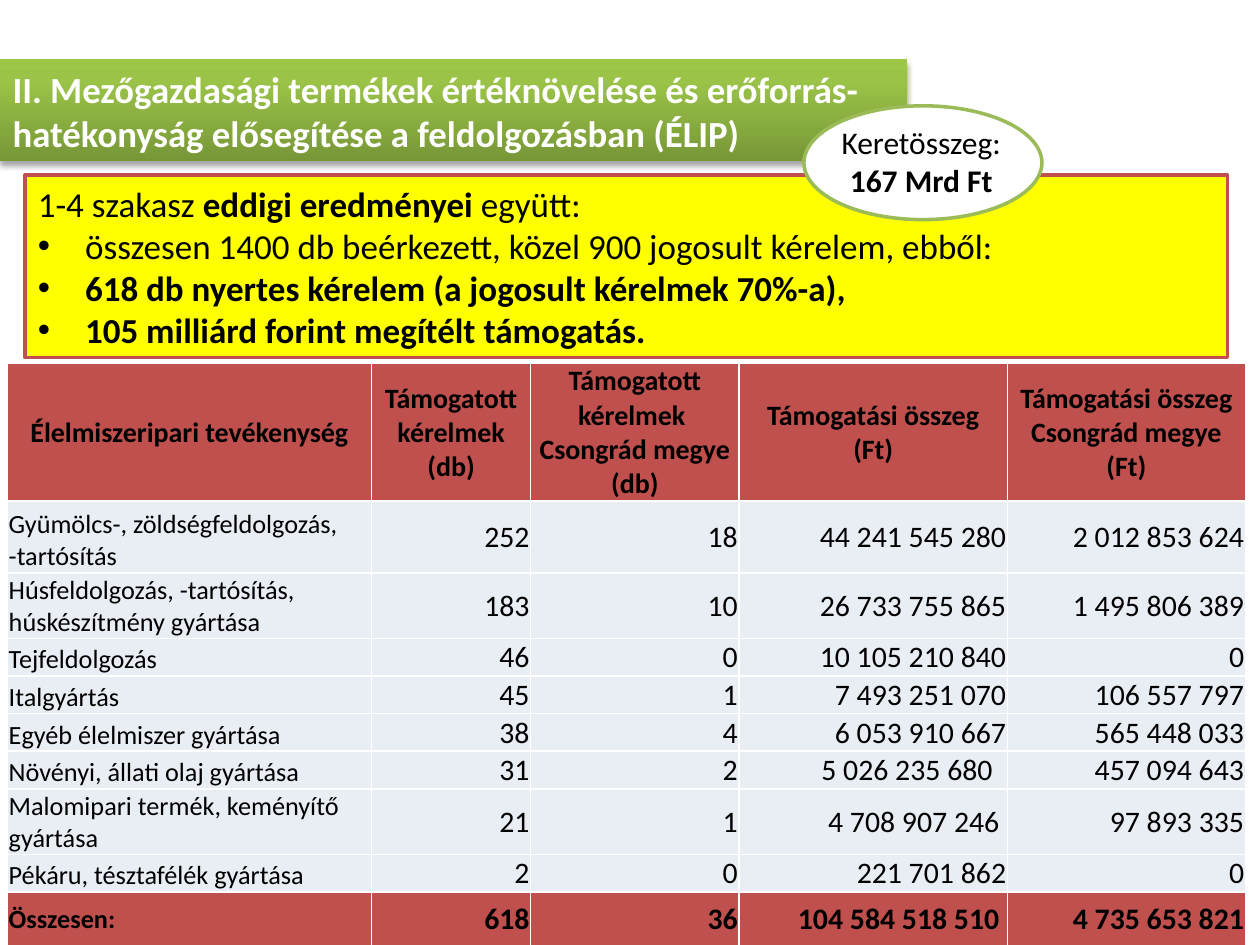
from pptx import Presentation
from pptx.dml.color import RGBColor
from pptx.enum.shapes import MSO_SHAPE
from pptx.enum.text import MSO_ANCHOR, MSO_AUTO_SIZE, PP_ALIGN
from pptx.oxml import parse_xml
from pptx.oxml.ns import nsdecls
from pptx.util import Pt

COLORS = {
    "text": "000000", "white": "FFFFFF", "yellow": "FFFF00", "red": "C0504D",
    "row": "E9EDF4", "green": "9BBB59", "dark_green": "779737",
    "mid_green": "9BC348", "light_green": "9DC746",
}
FONT = "Calibri"
HEADERS = [
    "Élelmiszeripari tevékenység",
    "Támogatott kérelmek (db)",
    "Támogatott kérelmek \nCsongrád megye\n(db)",
    "Támogatási összeg\n(Ft)",
    "Támogatási összeg\nCsongrád megye\n(Ft)",
]
ACTIVITIES = [
    ["Gyümölcs-, zöldségfeldolgozás,\n-tartósítás", "252", "18", "44 241 545 280", "2 012 853 624"],
    ["Húsfeldolgozás, -tartósítás, húskészítmény gyártása", "183", "10", "26 733 755 865", "1 495 806 389"],
    ["Tejfeldolgozás", "46", "0", "10 105 210 840", "0"],
    ["Italgyártás", "45", "1", "7 493 251 070", "106 557 797"],
    ["Egyéb élelmiszer gyártása", "38", "4", "6 053 910 667", "565 448 033"],
    ["Növényi, állati olaj gyártása", "31", "2", "5 026 235 680  ", "457 094 643"],
    ["Malomipari termék, keményítő gyártása", "21", "1", "4 708 907 246 ", "97 893 335"],
    ["Pékáru, tésztafélék gyártása", "2", "0", "221 701 862", "0"],
]
TOTALS = ["Összesen:", "618", "36", "104 584 518 510 ", "4 735 653 821"]
COLUMN_WIDTHS = [208, 91, 119, 153.4, 136]
ROW_HEIGHTS = [72, 41, 27.4, 16, 16, 16, 16, 27.4, 16, 31]


def rgb(name):
    """Return the named palette colour."""
    return RGBColor.from_string(COLORS[name])


def place(shape, box):
    """Move and size a shape to a box given in points."""
    shape.left, shape.top, shape.width, shape.height = map(Pt, box)


def style(span, size, bold=False, color="text"):
    """Format one run."""
    span.font.name = FONT
    span.font.size = Pt(size)
    span.font.bold = bold
    span.font.color.rgb = rgb(color)


def paint(shape, fill, line):
    """Give a shape a plain fill and a two-point outline."""
    shape.fill.solid()
    shape.fill.fore_color.rgb = rgb(fill)
    shape.line.color.rgb = rgb(line)
    shape.line.width = Pt(2)


def add_title(page, box):
    """Fill the title placeholder as a green gradient banner with a shadow."""
    title = page.shapes.title
    place(title, box)
    stops = "".join(
        f'<a:gs pos="{position * 1000}"><a:srgbClr val="{COLORS[name]}"/></a:gs>'
        for position, name in [(0, "dark_green"), (80, "mid_green"), (100, "light_green")]
    )
    properties = title.element.spPr
    properties.append(parse_xml(
        f'<a:prstGeom {nsdecls("a")} prst="rect"><a:avLst/></a:prstGeom>'))
    properties.append(parse_xml(
        f'<a:gradFill {nsdecls("a")} rotWithShape="1"><a:gsLst>{stops}</a:gsLst>'
        '<a:lin ang="16200000" scaled="0"/></a:gradFill>'))
    properties.append(parse_xml(
        f'<a:effectLst {nsdecls("a")}><a:outerShdw blurRad="{Pt(3.1)}" dist="{Pt(1.8)}" '
        f'dir="5400000" rotWithShape="0"><a:srgbClr val="{COLORS["text"]}">'
        '<a:alpha val="35000"/></a:srgbClr></a:outerShdw></a:effectLst>'))
    frame = title.text_frame
    frame.text = ("II. Mezőgazdasági termékek értéknövelése és "
                  "erőforrás-hatékonyság elősegítése a feldolgozásban (ÉLIP)")
    frame.auto_size = MSO_AUTO_SIZE.NONE
    frame.vertical_anchor = MSO_ANCHOR.MIDDLE
    para = frame.paragraphs[0]
    para.alignment = PP_ALIGN.LEFT
    style(para.runs[0], 21, True, "white")


def add_results(page, box):
    """Fill the body placeholder with the results so far."""
    body = page.placeholders[1]
    place(body, box)
    paint(body, "yellow", "red")
    lines = [
        [("1-4 szakasz ", False), ("eddigi eredményei ", True), ("együtt:", False)],
        [("összesen 1400 db beérkezett, közel 900 jogosult kérelem, ebből:", False)],
        [("618 db nyertes kérelem (a jogosult kérelmek 70%-a),", True)],
        [("105 milliárd forint megítélt támogatás.", True)],
    ]
    frame = body.text_frame
    frame.auto_size = MSO_AUTO_SIZE.NONE
    frame.vertical_anchor = MSO_ANCHOR.MIDDLE
    for index, spans in enumerate(lines):
        para = frame.add_paragraph() if index else frame.paragraphs[0]
        para.space_before = Pt(0)
        indent = Pt(27) if index else 0
        bullet = '<a:buChar {} char="•"/>' if index else '<a:buNone {}/>'
        properties = para._p.get_or_add_pPr()
        properties.set("marL", str(indent))
        properties.set("indent", str(-indent))
        properties.append(parse_xml(bullet.format(nsdecls("a"))))
        for text, bold in spans:
            span = para.add_run()
            span.text = text
            style(span, 20, bold)


def fill_cell(cell, text, size, bold, fill, alignment, anchor):
    """Write and format one table cell with white borders."""
    cell.text = text
    cell.margin_left = cell.margin_right = cell.margin_top = Pt(0.7)
    cell.margin_bottom = 0
    cell.vertical_anchor = anchor
    cell.fill.solid()
    cell.fill.fore_color.rgb = rgb(fill)
    for para in cell.text_frame.paragraphs:
        para.alignment = alignment
        for span in para.runs:
            style(span, size, bold)
    properties = cell._tc.get_or_add_tcPr()
    for index, side in enumerate(["lnL", "lnR", "lnT", "lnB"]):
        properties.insert(index, parse_xml(
            f'<a:{side} {nsdecls("a")} w="{Pt(1)}"><a:solidFill>'
            f'<a:srgbClr val="{COLORS["white"]}"/></a:solidFill></a:{side}>'))


def add_support_table(page, box):
    """Add the table of support by food industry activity."""
    rows = [HEADERS, *ACTIVITIES, TOTALS]
    table = page.shapes.add_table(len(rows), len(HEADERS), *map(Pt, box)).table
    table.first_row = table.horz_banding = False
    for column, width in zip(table.columns, COLUMN_WIDTHS):
        column.width = Pt(width)
    for row, height in zip(table.rows, ROW_HEIGHTS):
        row.height = Pt(height)
    for row_index, values in enumerate(rows):
        header, total = values is HEADERS, values is TOTALS
        for column_index, text in enumerate(values):
            label = column_index == 0
            size = 16 if header else 15 if label else 17
            alignment = (PP_ALIGN.CENTER if header
                         else PP_ALIGN.LEFT if label else PP_ALIGN.RIGHT)
            anchor = (MSO_ANCHOR.BOTTOM if label and not (header or total)
                      else MSO_ANCHOR.MIDDLE)
            fill_cell(table.cell(row_index, column_index), text, size, header or total,
                      "red" if header or total else "row", alignment, anchor)


def add_budget(page, box):
    """Add the oval with the budget label centred on it."""
    left, top, width, height = box
    oval = page.shapes.add_shape(MSO_SHAPE.OVAL, *map(Pt, box))
    oval.shadow.inherit = False
    paint(oval, "white", "green")
    label = page.shapes.add_textbox(
        Pt(left + 13.5), Pt(top + 6.5), Pt(width - 29), Pt(height - 14))
    frame = label.text_frame
    frame.word_wrap = False
    frame.text = "Keretösszeg:\n167 Mrd Ft"
    for para, bold in zip(frame.paragraphs, [False, True]):
        para.alignment = PP_ALIGN.CENTER
        style(para.runs[0], 18, bold)


def main():
    """Build and save the slide."""
    deck = Presentation()
    deck.slide_width, deck.slide_height = Pt(720), Pt(540)
    page = deck.slides.add_slide(deck.slide_layouts[1])
    add_title(page, (0, 34, 518.4, 58.3))
    add_results(page, (14.4, 100, 687, 104.4))
    add_support_table(page, (4.3, 207.4, 707.4, 328.3))
    add_budget(page, (459.4, 60.5, 136, 65))
    deck.save("out.pptx")


if __name__ == "__main__":
    main()
